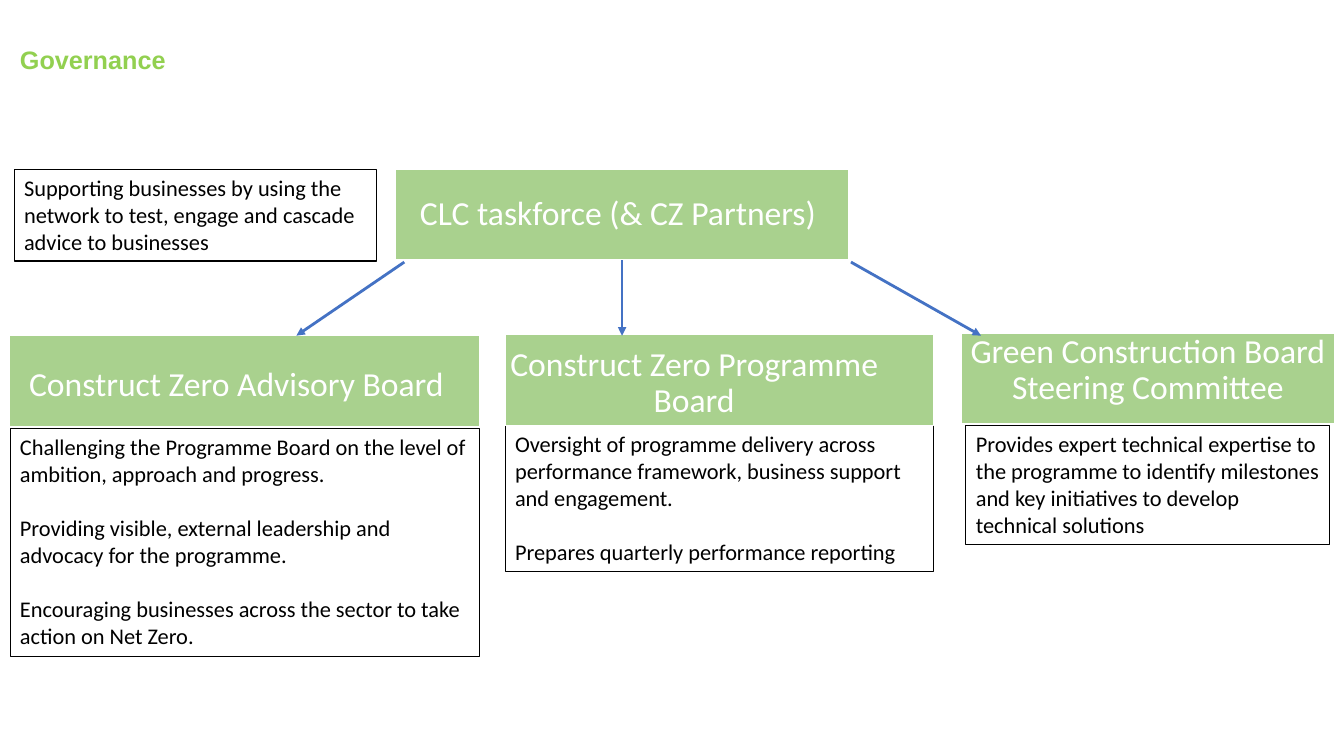
from lxml import etree
from pptx import Presentation
from pptx import util as u
from pptx.dml import color
from pptx.enum import shapes, text
from pptx.oxml import ns

PX = 9144
COLORS = {"title": "92D050", "header": "A9D18E", "white": "FFFFFF",
          "black": "000000", "arrow": "4472C4"}


def rgb(name):
    return color.RGBColor.from_string(COLORS[name])


def write(frame, paragraphs, size=16, font="Calibri", ink="black", bold=False,
          align=text.PP_ALIGN.LEFT, anchor=text.MSO_ANCHOR.TOP,
          spacing=1.0, gap=0, inset=None):
    frame.word_wrap = True
    frame.vertical_anchor = anchor
    if inset is not None:
        frame.margin_left = frame.margin_right = inset * PX
        frame.margin_top = frame.margin_bottom = inset * PX
    for index, words in enumerate(paragraphs):
        para = frame.add_paragraph() if index else frame.paragraphs[0]
        para.alignment = align
        para.line_spacing = spacing
        if index:
            para.space_before = u.Pt(gap)
        span = para.add_run()
        span.text = words
        span.font.size = u.Pt(size)
        span.font.name = font
        span.font.bold = bold
        span.font.color.rgb = rgb(ink)


class Chart:
    def __init__(self, deck):
        self.page = deck.slides.add_slide(deck.slide_layouts[6])

    def label(self, place, words, **style):
        box = self.page.shapes.add_textbox(*(n * PX for n in place))
        write(box.text_frame, [words], spacing=0.9, **style)

    def rectangle(self, place, line, width, fill=None):
        box = self.page.shapes.add_shape(
            shapes.MSO_SHAPE.RECTANGLE, *(n * PX for n in place))
        box.shadow.inherit = False
        if fill:
            box.fill.solid()
            box.fill.fore_color.rgb = rgb(fill)
        else:
            box.fill.background()
        box.line.color.rgb = rgb(line)
        box.line.width = u.Pt(width)
        return box

    def header(self, place, label_place, words, inset=2):
        box = self.rectangle(place, "white", 1, "header")
        self.label(label_place, words, size=24, ink="white", inset=inset,
                   align=text.PP_ALIGN.CENTER, anchor=text.MSO_ANCHOR.MIDDLE)
        return box

    def note(self, place, *paragraphs):
        box = self.rectangle(place, "black", 0.75)
        write(box.text_frame, paragraphs, gap=19.5)

    def arrow(self, start, end, source=None):
        link = self.page.shapes.add_connector(
            shapes.MSO_CONNECTOR.STRAIGHT, *(n * PX for n in start + end))
        if source is not None:
            link.begin_connect(source, 2)
        link.line.color.rgb = rgb("arrow")
        link.line.width = u.Pt(2)
        etree.SubElement(link.line._get_or_add_ln(), ns.qn("a:tailEnd"), type="triangle")
        etree.SubElement(link._element.spPr, ns.qn("a:effectLst"))


def main():
    deck = Presentation()
    deck.slide_width = 1333 * PX
    deck.slide_height = 750 * PX
    chart = Chart(deck)

    chart.label((10, 42, 1254, 55), "Governance",
                size=18, font="Arial", ink="title", bold=True)
    taskforce = chart.header((392, 168, 450, 90), (388, 168, 450, 90),
                             "CLC taskforce (& CZ Partners)")

    chart.note((10, 425, 466, 226),
               "Challenging the Programme Board on the level of ambition, approach and progress.",
               "Providing visible, external leadership and advocacy for the programme.",
               "Encouraging businesses across the sector to take action on Net Zero.")
    chart.note((501, 422, 425, 145),
               "Oversight of programme delivery across performance framework, "
               "business support and engagement.",
               "Prepares quarterly performance reporting")
    chart.note((958, 422, 361, 118),
               "Provides expert technical expertise to the programme to identify "
               "milestones and key initiatives to develop technical solutions")
    chart.note((14, 168, 359, 91),
               "Supporting businesses by using the network to test, engage and "
               "cascade advice to businesses")

    chart.header((501, 332, 425, 90), (476, 345, 425, 71),
                 "Construct Zero Programme Board")
    chart.header((953, 331, 371, 89), (953, 331, 371, 73),
                 "Green Construction Board Steering Committee")
    chart.header((9, 333, 467, 90), (1, 353, 467, 60),
                 "Construct Zero Advisory Board", inset=4)

    chart.arrow((617, 258), (617, 333), taskforce)
    chart.arrow((844, 260), (973, 333))
    chart.arrow((401, 260), (294, 333))
    deck.save("out.pptx")


if __name__ == "__main__":
    main()
